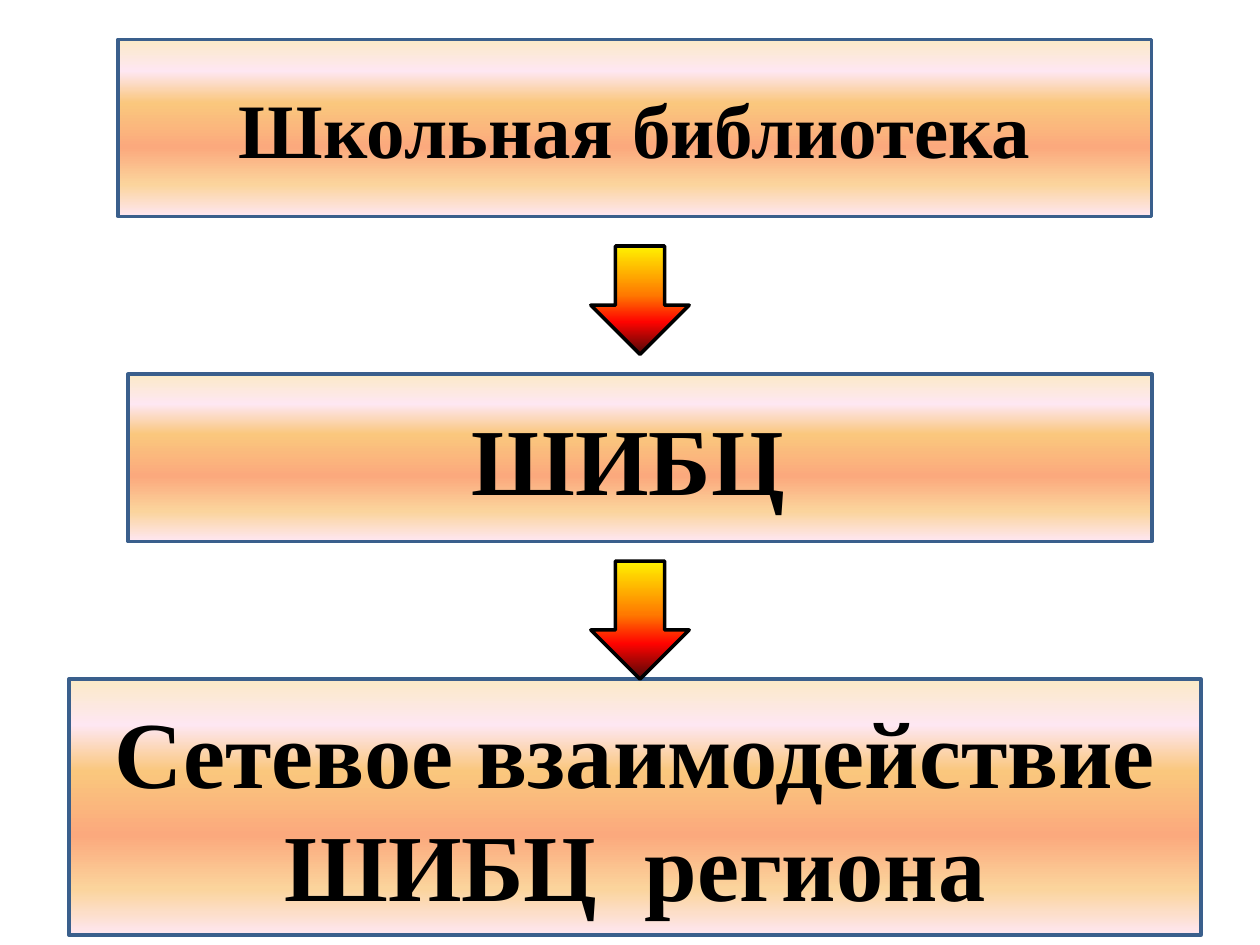
"""Build a slide showing a school library growing into a regional network."""
from copy import deepcopy
from dataclasses import dataclass

from pptx import Presentation
from pptx.dml.color import RGBColor as Color
from pptx.enum.shapes import MSO_SHAPE as Preset
from pptx.enum.text import MSO_ANCHOR as Anchor, PP_ALIGN as Align
from pptx.oxml.ns import qn
from pptx.util import Pt


@dataclass(frozen=True)
class Theme:
    font: str = "Times New Roman"
    text: str = "000000"
    box_line: str = "3A5F8C"
    arrow_line: str = "000000"
    line_width: float = 2
    heading_size: float = 44
    large_size: float = 54
    box_stops: tuple = (
        (0, "FBEAC7"), (0.18, "FEE7F2"), (0.36, "FAC77D"),
        (0.61, "FBA97D"), (0.82, "FBD49C"), (1, "FEE7F2"),
    )
    arrow_stops: tuple = (
        (0, "FFF200"), (0.45, "FF7A00"), (0.7, "FF0300"), (1, "4D0808"),
    )


class SlideBuilder:
    def __init__(self, slide, theme):
        self.slide = slide
        self.theme = theme

    def gradient_shape(self, preset, bounds, stops, line_color):
        shape = self.slide.shapes.add_shape(preset, *map(Pt, bounds))
        shape.shadow.inherit = False
        shape.line.color.rgb = Color.from_string(line_color)
        shape.line.width = Pt(self.theme.line_width)
        shape.fill.gradient()
        shape.fill.gradient_angle = 270
        stop_list = next(shape.element.iter(qn("a:gsLst")))
        while len(stop_list) < len(stops):
            stop_list.append(deepcopy(stop_list[0]))
        for stop, (position, color) in zip(shape.fill.gradient_stops, stops):
            stop.position = position
            stop.color.rgb = Color.from_string(color)
        return shape

    def box(self, bounds, text, size):
        theme = self.theme
        shape = self.gradient_shape(
            Preset.RECTANGLE, bounds, theme.box_stops, theme.box_line)
        frame = shape.text_frame
        frame.word_wrap = True
        frame.vertical_anchor = Anchor.MIDDLE
        paragraph = frame.paragraphs[0]
        paragraph.text = text
        paragraph.alignment = Align.CENTER
        font = paragraph.font
        font.name = theme.font
        font.size = Pt(size)
        font.bold = True
        font.color.rgb = Color.from_string(theme.text)

    def arrow(self, top, height):
        theme = self.theme
        self.gradient_shape(
            Preset.DOWN_ARROW, (337.6, top, 56.2, height),
            theme.arrow_stops, theme.arrow_line)


def main():
    presentation = Presentation()
    presentation.slide_width = Pt(720)
    presentation.slide_height = Pt(540)
    slide = presentation.slides.add_slide(presentation.slide_layouts[6])
    theme = Theme()
    builder = SlideBuilder(slide, theme)

    builder.box((67.5, 22.5, 590.6, 101.2), "Школьная библиотека", theme.heading_size)
    builder.box((73.2, 213.8, 585, 95.6), "ШИБЦ ", theme.large_size)
    builder.box((39.4, 388.1, 646.9, 146.2),
                "Сетевое взаимодействие ШИБЦ  региона", theme.large_size)
    builder.arrow(140.6, 61.9)
    builder.arrow(320.6, 67.5)

    presentation.save("out.pptx")


if __name__ == "__main__":
    main()
